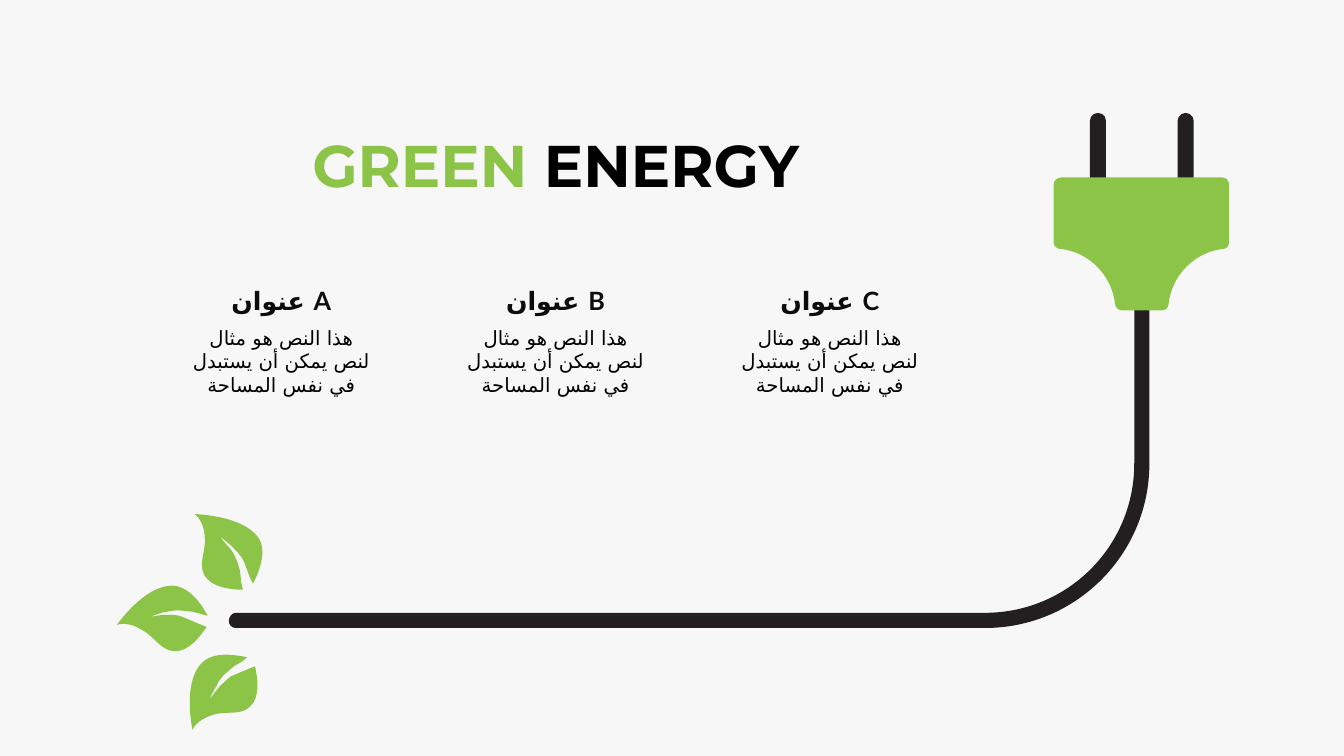
from lxml import etree
from pptx import Presentation
from pptx.dml.color import RGBColor
from pptx.enum.shapes import MSO_SHAPE
from pptx.enum.text import MSO_ANCHOR, MSO_AUTO_SIZE, PP_ALIGN
from pptx.oxml.ns import qn
from pptx.util import Inches, Pt

ROUNDED = MSO_SHAPE.ROUNDED_RECTANGLE
CENTER = PP_ALIGN.CENTER
TOP = MSO_ANCHOR.TOP
NO_FIT = MSO_AUTO_SIZE.NONE

GREEN = RGBColor(0x8B, 0xC4, 0x46)
CABLE = RGBColor(0x23, 0x1F, 0x20)
BLACK = RGBColor(0, 0, 0)
HEADING = RGBColor(0x0C, 0x0C, 0x0C)
PAPER = RGBColor(0xF7, 0xF7, 0xF7)

ARABIC_FONT = "DejaVu Sans"
UNITS = 1000  # outline units per inch


def draw_outline(shapes, start, segments, color):
    """Segments hold one x, y pair for a line or three pairs for a cubic curve."""
    points = [(x * UNITS, y * UNITS) for segment in segments
              for x, y in zip(segment[::2], segment[1::2])]
    builder = shapes.build_freeform(start[0] * UNITS, start[1] * UNITS, Inches(1) / UNITS)
    builder.add_line_segments(points, close=True)
    outline = builder.convert_to_shape()
    # Join the three points of each curve into one Bézier element
    lines = iter(list(outline._element.iter(qn("a:lnTo"))))
    for segment in segments:
        line = next(lines)
        if len(segment) == 6:
            line.addprevious(curve := etree.Element(qn("a:cubicBezTo")))
            for part in (line, next(lines), next(lines)):
                curve.append(part[0])
                part.getparent().remove(part)
    outline.shadow.inherit = False
    outline.fill.solid()
    outline.fill.fore_color.rgb = color
    outline.line.fill.background()


def format_text(box, spans, font, size, bold, margins=(0, 0)):
    frame = box.text_frame
    frame.word_wrap = True
    frame.auto_size = NO_FIT
    frame.vertical_anchor = TOP
    frame.margin_left = frame.margin_right = Inches(margins[0])
    frame.margin_top = frame.margin_bottom = Inches(margins[1])
    para = frame.paragraphs[0]
    para.alignment = CENTER
    for text, color in spans:
        span = para.add_run()
        span.text = text
        span.font.name = font
        span.font.size = Pt(size)
        span.font.bold = bold
        span.font.color.rgb = color
        # Arabic letters use the complex-script typeface
        etree.SubElement(span.font._element, qn("a:cs")).set("typeface", ARABIC_FONT)


deck = Presentation()
deck.slide_width = Inches(13.33)
deck.slide_height = Inches(7.5)
page = deck.slides.add_slide(deck.slide_layouts[5])
page.background.fill.solid()
page.background.fill.fore_color.rgb = PAPER

# Leaves
art = page.shapes.add_group_shape().shapes
leaves = [
    ((1.93, 5.1), [
        (1.93, 5.1, 2.02, 5.16, 2.03, 5.31), (2.05, 5.48, 1.96, 5.58, 2.03, 5.71),
        (2.1, 5.83, 2.3, 5.85, 2.41, 5.85), (2.4, 5.81, 2.39, 5.77, 2.39, 5.74),
        (2.38, 5.66), (2.36, 5.59), (2.34, 5.54, 2.32, 5.49, 2.29, 5.45),
        (2.25, 5.41, 2.22, 5.37, 2.18, 5.32), (2.23, 5.36, 2.27, 5.39, 2.31, 5.43),
        (2.35, 5.47, 2.39, 5.51, 2.42, 5.57), (2.45, 5.65), (2.48, 5.73), (2.51, 5.79),
        (2.56, 5.69, 2.66, 5.47, 2.56, 5.33), (2.4, 5.11, 1.93, 5.1, 1.93, 5.1)]),
    ((1.16, 6.2), [
        (1.16, 6.2, 1.26, 6.16, 1.39, 6.24), (1.55, 6.32, 1.58, 6.45, 1.73, 6.46),
        (1.87, 6.47, 1.99, 6.31, 2.05, 6.22), (1.95, 6.18), (1.88, 6.15), (1.81, 6.12),
        (1.76, 6.1, 1.71, 6.1, 1.66, 6.1), (1.6, 6.1, 1.55, 6.11, 1.49, 6.12),
        (1.54, 6.1, 1.59, 6.08, 1.65, 6.07), (1.7, 6.06, 1.76, 6.05, 1.82, 6.06),
        (1.91, 6.07), (1.99, 6.09), (2.06, 6.11),
        (2.01, 6.01, 1.88, 5.81, 1.7, 5.81), (1.42, 5.82, 1.16, 6.2, 1.16, 6.2)]),
    ((1.91, 7.24), [
        (1.91, 7.24, 1.94, 7.15, 2.09, 7.1), (2.25, 7.04, 2.37, 7.11, 2.48, 7.01),
        (2.59, 6.91, 2.55, 6.71, 2.53, 6.61), (2.43, 6.65), (2.36, 6.68), (2.29, 6.71),
        (2.25, 6.74, 2.21, 6.78, 2.17, 6.82), (2.14, 6.86, 2.1, 6.9, 2.08, 6.95),
        (2.09, 6.9, 2.12, 6.85, 2.15, 6.8), (2.17, 6.75, 2.21, 6.7, 2.25, 6.67),
        (2.32, 6.61), (2.39, 6.57), (2.42, 6.55, 2.43, 6.54, 2.45, 6.52),
        (2.34, 6.5, 2.11, 6.45, 1.99, 6.59), (1.81, 6.79, 1.91, 7.24, 1.91, 7.24)]),
]
for start, segments in leaves:
    draw_outline(art, start, segments, GREEN)

# Cable
draw_outline(art, (9.77, 6.23), [
    (2.34, 6.23), (2.3, 6.23, 2.27, 6.2, 2.27, 6.16), (2.27, 6.12, 2.3, 6.08, 2.34, 6.08),
    (9.77, 6.08), (10.59, 6.08, 11.25, 5.42, 11.25, 4.6),
    (11.25, 3.06), (11.25, 3.02, 11.28, 2.99, 11.33, 2.99), (11.36, 2.99, 11.4, 3.02, 11.4, 3.06),
    (11.4, 4.6), (11.4, 5.5, 10.67, 6.23, 9.77, 6.23)], CABLE)

# Plug prongs and body
for left in (10.81, 11.68):
    prong = art.add_shape(ROUNDED, Inches(left), Inches(1.12), Inches(0.16), Inches(0.72))
    prong.adjustments[0] = 0.5
    prong.shadow.inherit = False
    prong.fill.solid()
    prong.fill.fore_color.rgb = CABLE
    prong.line.fill.background()
draw_outline(art, (12.19, 2.4), [
    (12.19, 1.83), (12.19, 1.79, 12.16, 1.76, 12.12, 1.76),
    (10.53, 1.76), (10.49, 1.76, 10.45, 1.79, 10.45, 1.83),
    (10.45, 2.4), (10.45, 2.44, 10.48, 2.47, 10.52, 2.47),
    (10.8, 2.5, 11.03, 2.73, 11.06, 3.02), (11.06, 3.05, 11.1, 3.08, 11.13, 3.08),
    (11.52, 3.08), (11.56, 3.08, 11.59, 3.05, 11.59, 3.02),
    (11.62, 2.73, 11.85, 2.5, 12.13, 2.47), (12.17, 2.47, 12.19, 2.44, 12.19, 2.4)], GREEN)

# Title
title = page.shapes.title
title.left, title.top = Inches(1.92), Inches(1.28)
title.width, title.height = Inches(7.18), Inches(0.71)
format_text(title, [("GREEN ", GREEN), ("ENERGY", BLACK)], "Montserrat", 42, True)

# Three text columns
FIRST_CENTER, PITCH = 2.79, 2.72
HEAD_WIDTH, BODY_WIDTH = 1.7, 1.97
for column, letter in enumerate("ABC"):
    center = FIRST_CENTER + column * PITCH
    group = page.shapes.add_group_shape().shapes
    heading = group.add_textbox(Inches(center - HEAD_WIDTH / 2), Inches(2.83),
                                Inches(HEAD_WIDTH), Inches(0.36))
    format_text(heading, [(f"عنوان {letter}", HEADING)], "Lato", 18, True)
    body = group.add_textbox(Inches(center - BODY_WIDTH / 2), Inches(3.18),
                             Inches(BODY_WIDTH), Inches(0.81))
    format_text(body, [("هذا النص هو مثال لنص يمكن أن يستبدل في نفس المساحة", BLACK)],
                "Lato", 14, False, margins=(0.1, 0.05))

deck.save("out.pptx")
